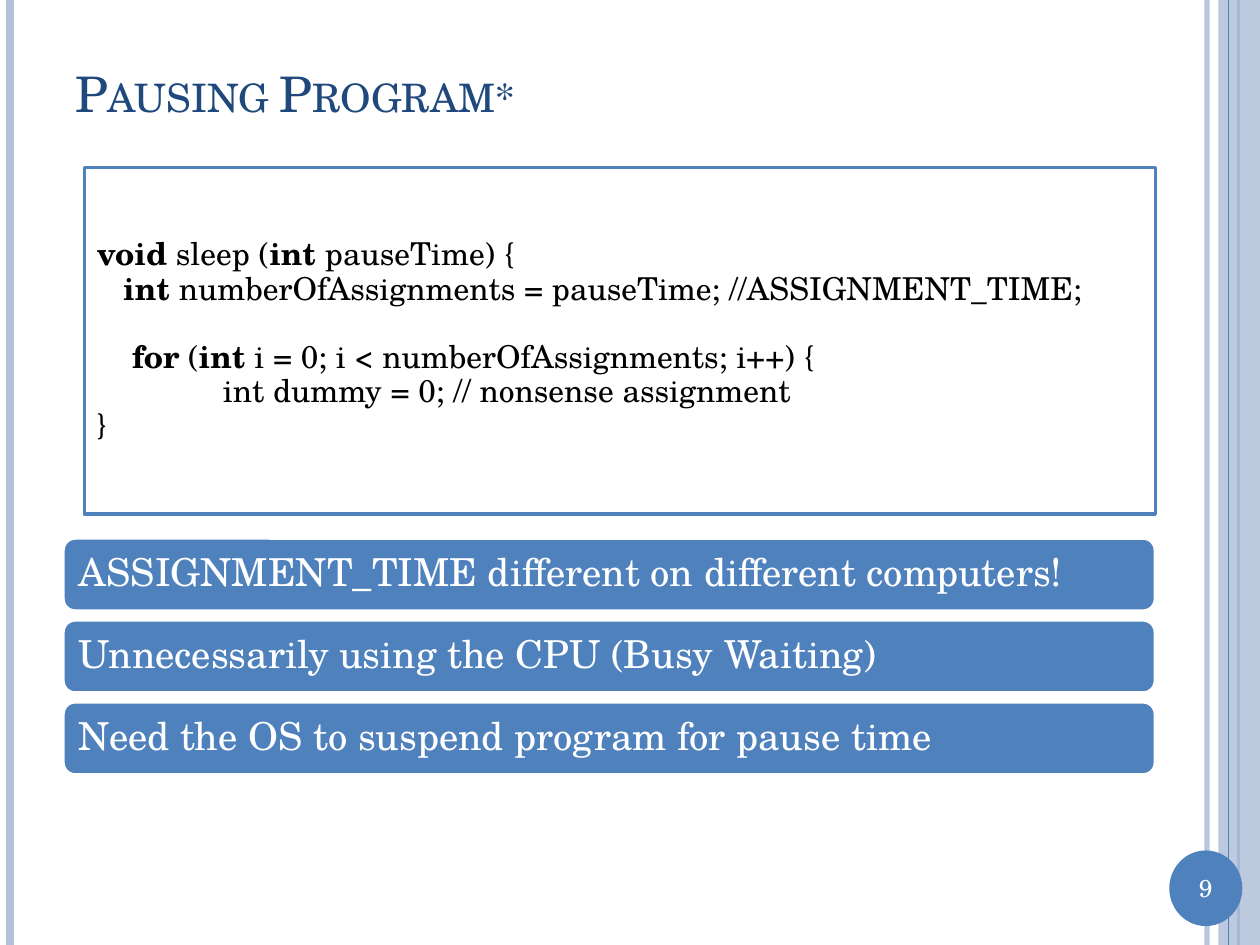
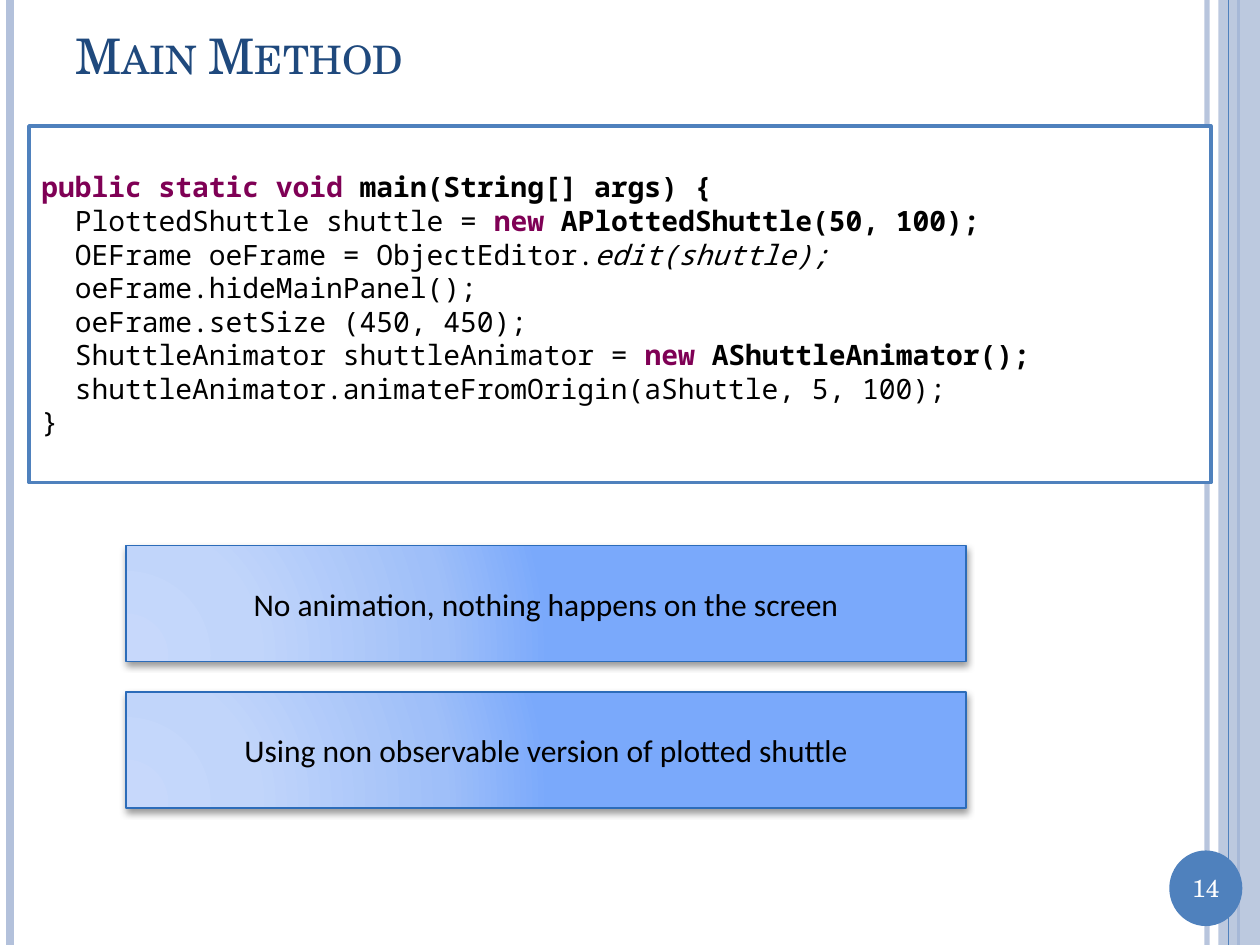
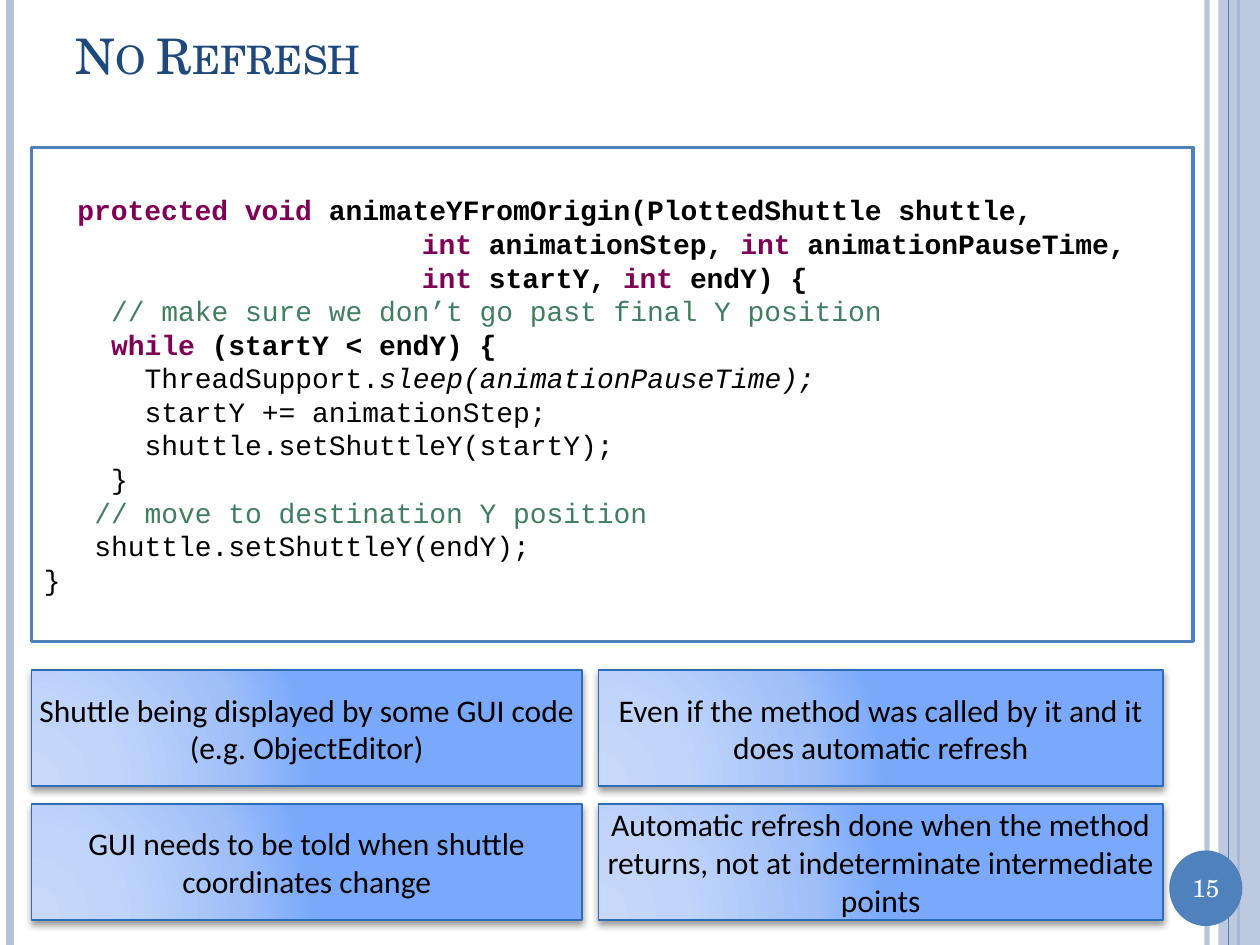
from dataclasses import dataclass

from lxml import etree
from pptx import Presentation
from pptx import util as u
from pptx.dml.color import RGBColor
from pptx.enum import shapes, text
from pptx.oxml.ns import qn


@dataclass(frozen=True)
class Theme:
    blue: str = "4F81BD"
    pale: str = "B3C1DB"
    navy: str = "1F497D"
    white: str = "FFFFFF"
    black: str = "000000"
    plum: str = "7F0055"
    green: str = "3F7F5F"
    edge: str = "2C6CB9"
    fade: tuple = ((0, "C7D8FB"), (30, "C1D5FA"), (75, "9FBFF9"), (100, "7AA9FB"))
    serif: str = "TeX Gyre Schola"
    sans: str = "Calibri"
    mono: str = "Noto Sans Mono"
    courier: str = "Courier New"
    head: int = 28
    bar: int = 22
    body: int = 18
    code: int = 16
    page: int = 14


T = Theme()
WIDE, HIGH = 10, 7.5
KIND = shapes.MSO_SHAPE
LEFT, MID = text.PP_ALIGN.LEFT, text.PP_ALIGN.CENTER
BOLD = dict(bold=True)
KEY = dict(bold=True, color=T.plum)
TILT = dict(italic=True)
NOTE = dict(color=T.green)
SPACE = 0.07  # width of a serif space at body size
CHAR = 0.6 * T.code / 72  # width of a monospaced letter at code size


def rgb(code):
    return RGBColor.from_string(code)


def inches(box):
    return [u.Inches(side) for side in box]


def sub(parent, tag, **attrs):
    node = etree.SubElement(parent, qn(tag))
    for name, value in attrs.items():
        node.set(name, str(value))
    return node


def alpha(item, part):
    """Make the colour of a shape or line opaque to the given percentage."""
    color = next(item._element.spPr.iter(qn("a:srgbClr")))
    sub(color, "a:alpha", val=part * 1000)


def write(shape, lines, size=T.body, face=T.serif, color=T.black, align=LEFT,
          anchor=text.MSO_ANCHOR.MIDDLE, pad=None, lead=None, step=0, caps=False):
    """Fill a shape with a string, or with lines of (indent in steps, run, ...).

    A run is a string or a (string, style) pair; None leaves one line's gap.
    """
    frame = shape.text_frame
    frame.word_wrap = True
    frame.vertical_anchor = anchor
    if pad is not None:
        frame.margin_left = frame.margin_right = u.Inches(pad)
        frame.margin_top = frame.margin_bottom = u.Inches(pad)
    if isinstance(lines, str):
        lines = [(0, lines)]
    para, gap = frame.paragraphs[0], False
    for spot, line in enumerate(lines):
        if line is None:
            gap = True
            continue
        if spot:
            para = frame.add_paragraph()
        para.alignment = align
        if lead:
            para.line_spacing = lead
        if gap:
            para.space_before = u.Pt(size * 1.08)
            gap = False
        indent, *runs = line
        if indent:
            para._p.get_or_add_pPr().set("marL", str(u.Inches(indent * step)))
        for item in runs:
            words, style = (item, {}) if isinstance(item, str) else item
            run = para.add_run()
            run.text = words
            font = run.font
            font.name, font.size = face, u.Pt(size)
            font.bold = style.get("bold", False)
            font.italic = style.get("italic", False)
            font.color.rgb = rgb(style.get("color", color))
            if caps:
                run._r.get_or_add_rPr().set("cap", "small")


def block(slide, kind, box, fill=None, line=None, width=1):
    shape = slide.shapes.add_shape(kind, *inches(box))
    shape.shadow.inherit = False
    if fill:
        shape.fill.solid()
        shape.fill.fore_color.rgb = rgb(fill)
    else:
        shape.fill.background()
    if line:
        shape.line.color.rgb = rgb(line)
        shape.line.width = u.Pt(width)
    else:
        shape.line.fill.background()
    return shape


def label(slide, box, words, **form):
    write(slide.shapes.add_textbox(*inches(box)), words, **form)


def rule(slide, x, color, width):
    """Draw an upright line over the full height of the slide."""
    line = slide.shapes.add_connector(
        shapes.MSO_CONNECTOR.STRAIGHT, *inches((x, 0, x, HIGH)))
    line.line.color.rgb = rgb(color)
    line.line.width = u.Pt(width)
    sub(line._element.spPr, "a:effectLst")
    return line


def sides(slide, page):
    """Draw the side bands and the page badge."""
    alpha(rule(slide, 9.58, T.pale, 3), 93)
    rule(slide, 0.08, T.pale, 4.5)
    rule(slide, 9.83, T.blue, 1.5)
    alpha(block(slide, KIND.RECTANGLE, (9.67, 0, WIDE - 9.67, HIGH), T.pale), 87)
    rule(slide, 9.75, T.blue, 0.75)
    x, y, wide = 9.28, 6.75, 0.58
    block(slide, KIND.OVAL, (x, y, wide, 0.6), T.blue)
    label(slide, (x, y + 0.13, wide, 0.34), str(page), size=T.page,
          color=T.white, align=MID, anchor=text.MSO_ANCHOR.TOP)


def base(deck, page, title, top=0):
    slide = deck.slides.add_slide(deck.slide_layouts[6])
    sides(slide, page)
    label(slide, (0.5, top, 8.67, 0.87), title, size=T.head, color=T.navy, caps=True)
    return slide


def code(slide, box, lines, **form):
    shape = block(slide, KIND.RECTANGLE, box, T.white, T.blue, 2)
    write(shape, lines, **form)


def bar(slide, box, words):
    shape = block(slide, KIND.ROUNDED_RECTANGLE, box, T.blue, T.white, 2)
    write(shape, words, size=T.bar, color=T.white, pad=0.1, lead=0.9)


def card(slide, box, words):
    """Draw a shaded note with a soft shadow."""
    shape = block(slide, KIND.RECTANGLE, box, line=T.edge)
    props = shape._element.spPr
    grad = etree.Element(qn("a:gradFill"), rotWithShape="1")
    stops = sub(grad, "a:gsLst")
    for spot, color in T.fade:
        sub(sub(stops, "a:gs", pos=spot * 1000), "a:srgbClr", val=color)
    ring = sub(grad, "a:path", path="circle")
    sub(ring, "a:fillToRect", l=5000, t=100000, r=120000, b=10000)
    props.replace(props.find(qn("a:noFill")), grad)
    shade = sub(props.find(qn("a:effectLst")), "a:outerShdw", blurRad=u.Pt(4),
                dist=u.Pt(2), dir=90 * 60000, rotWithShape=0)
    sub(sub(shade, "a:srgbClr", val=T.black), "a:alpha", val=40000)
    write(shape, words, face=T.sans, align=MID, pad=0.05)


def stack(slide, draw, box, pitch, items):
    """Draw items downwards, the first one in the box."""
    x, y, wide, high = box
    for row, words in enumerate(items):
        draw(slide, (x, y + row * pitch, wide, high), words)


def pausing(deck):
    slide = base(deck, 9, "Pausing Program*", top=0.3)
    stack(slide, bar, (0.5, 4.27, 8.67, 0.58), 0.65, [
        "ASSIGNMENT_TIME different on different computers!",
        "Unnecessarily using the CPU (Busy Waiting)",
        "Need the OS to suspend program for pause time",
    ])
    code(slide, (0.67, 1.33, 8.5, 2.75), [
        (0, ("void", BOLD), " sleep (", ("int ", BOLD), "pauseTime) {"),
        (3, ("int ", BOLD), "numberOfAssignments = pauseTime; //ASSIGNMENT_TIME;"),
        None,
        (4, ("for", BOLD), " (", ("int ", BOLD),
         "i = 0; i < numberOfAssignments; i++) {"),
        (14.3, "int dummy = 0; // nonsense assignment"),
        (0, "}"),
    ], lead=0.9, step=SPACE)


def main_method(deck):
    slide = base(deck, 14, "Main Method")
    code(slide, (0.23, 1, 9.38, 2.83), [
        (0, ("public static void", KEY), (" main(String[] args) {", BOLD)),
        (2, "PlottedShuttle shuttle = ", ("new ", KEY),
         ("APlottedShuttle(50, 100);", BOLD)),
        (2, "OEFrame oeFrame = ObjectEditor.", ("edit(shuttle);", TILT)),
        (2, "oeFrame.hideMainPanel();"),
        (2, "oeFrame.setSize (450, 450);"),
        (2, "ShuttleAnimator shuttleAnimator = ", ("new ", KEY),
         ("AShuttleAnimator();", BOLD)),
        (2, "shuttleAnimator.animateFromOrigin(aShuttle, 5, 100);"),
        (0, "}"),
    ], size=T.code, face=T.mono, step=CHAR)
    stack(slide, card, (1, 4.33, 6.67, 0.92), 1.16, [
        "No animation, nothing happens on the screen",
        "Using non observable version of plotted shuttle",
    ])


def refresh(deck):
    slide = base(deck, 15, "No Refresh")
    code(slide, (0.25, 1.17, 9.22, 3.92), [
        (2, ("protected void ", KEY),
         ("animateYFromOrigin(PlottedShuttle shuttle,", BOLD)),
        (22.5, ("int ", KEY), ("animationStep, ", BOLD), ("int ", KEY),
         ("animationPauseTime,", BOLD)),
        (22.5, ("int ", KEY), ("startY, ", BOLD), ("int ", KEY), ("endY) {", BOLD)),
        (4, ("// make sure we don’t go past final Y position", NOTE)),
        (4, ("while ", KEY), ("(startY < endY) {", BOLD)),
        (6, "ThreadSupport.", ("sleep(animationPauseTime);", TILT)),
        (6, "startY += animationStep;"),
        (6, "shuttle.setShuttleY(startY);"),
        (4, "}"),
        (3, ("// move to destination Y position", NOTE)),
        (3, "shuttle.setShuttleY(endY);"),
        (0, "}"),
    ], size=T.code, face=T.courier, step=CHAR)
    top, high, pitch = 5.32, 0.92, 1.06
    stack(slide, card, (0.25, top, 4.37, high), pitch, [
        "Shuttle being displayed by some GUI code (e.g. ObjectEditor)",
        "GUI needs to be told when shuttle coordinates change",
    ])
    # The right column ends just short of the page badge.
    stack(slide, card, (4.75, top, 4.48, high), pitch, [
        "Even if the method was called by it and it does automatic refresh",
        "Automatic refresh done when the method returns, "
        "not at indeterminate intermediate points",
    ])


def main():
    deck = Presentation()
    deck.slide_width, deck.slide_height = inches((WIDE, HIGH))
    for build in (pausing, main_method, refresh):
        build(deck)
    deck.save("out.pptx")


if __name__ == "__main__":
    main()
